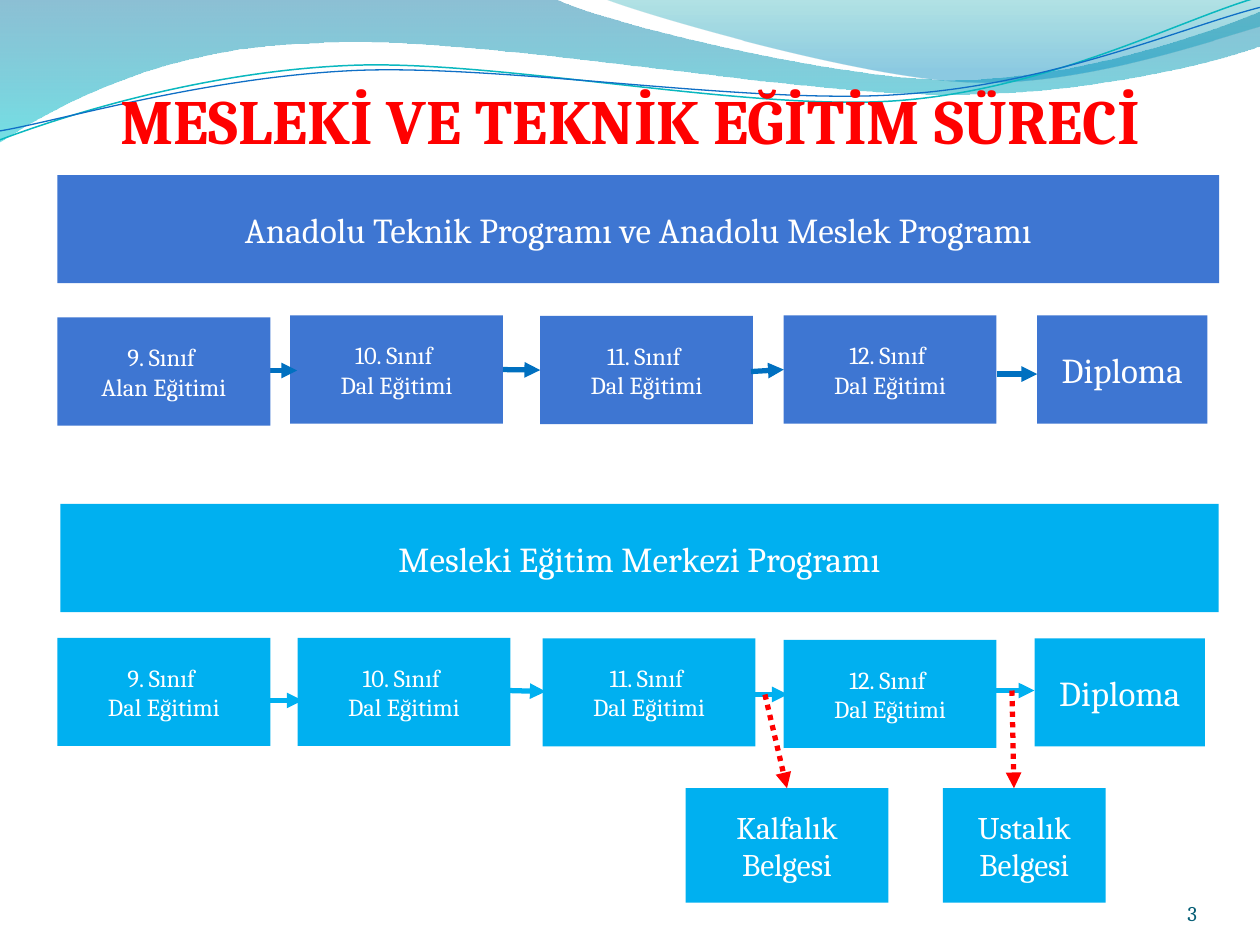
from lxml.etree import SubElement
from pptx import Presentation
from pptx.dml.color import RGBColor
from pptx.enum.dml import MSO_LINE
from pptx.enum.shapes import MSO_CONNECTOR, MSO_SHAPE
from pptx.enum.text import MSO_ANCHOR, PP_ALIGN
from pptx.oxml.ns import qn
from pptx.util import Cm, Pt

FONT = "Cambria"
WHITE = RGBColor(0xFF, 0xFF, 0xFF)
RED = RGBColor(0xFF, 0x00, 0x00)
ROYAL = RGBColor(0x3E, 0x76, 0xD2)
BLUE = RGBColor(0x00, 0x70, 0xC0)
SKY = RGBColor(0x00, 0xB0, 0xF0)
NAVY = RGBColor(0x04, 0x5D, 0x75)
WAVE_BLUE = RGBColor(0x00, 0x74, 0xA1)
WAVE_CYAN = RGBColor(0x00, 0xC6, 0xCF)
WAVE_TEAL = RGBColor(0x00, 0xA1, 0xA9)
WAVE_AZURE = RGBColor(0x00, 0x8B, 0xBF)
LINE_TEAL = RGBColor(0x0A, 0xB8, 0xBF)
LINE_BLUE = RGBColor(0x0F, 0x6F, 0xC6)

BOX_W, BOX_H, DIPLOMA_W = 4.29, 2.18, 3.43
WAVES = [
    ([(0, 0), (11.18, -0.03), (12.09, 0.43, 16.87, 1.6, 19.25, 1.6),
      (21.67, 1.6, 24.33, 0.66, 25.4, 0.23), (25.43, 0.91),
      (24.97, 1.12, 22.1, 1.93, 18.95, 1.9), (15.8, 1.9, 9.7, 0.71, 6.53, 0.86),
      (3.28, 0.91, 1.17, 2.11, -0.03, 2.87)],
     [(0, WAVE_BLUE, 45), (1, WAVE_CYAN, 55)]),
    ([(12.17, -0.03), (12.93, 0.28, 17.32, 1.57, 19.53, 1.65),
      (21.74, 1.75, 24.41, 0.81, 25.4, 0.53), (25.4, 0)],
     [(0, WAVE_TEAL, 30), (0.8, WAVE_AZURE, 45)]),
]
CURVES = [
    ([(0, 2.82), (1.22, 2.36, 4.01, 1.45, 7.04, 1.32),
      (10.03, 1.19, 15.06, 2.26, 18.11, 2.03),
      (21.16, 1.8, 23.83, 0.38, 25.35, -0.05)], LINE_TEAL, 0.85),
    ([(0, 2.64), (1.19, 2.44, 4.17, 1.55, 7.19, 1.42),
      (10.24, 1.3, 15.21, 2.13, 18.21, 1.9),
      (21.23, 1.7, 23.9, 0.53, 25.4, 0.15)], LINE_BLUE, 0.75),
]


def add_outline(s, path, close):
    """Add a freeform of corners (x, y) and cubic curves (six numbers)."""
    pts = [(Cm(seg[i]), Cm(seg[i + 1])) for seg in path for i in range(0, len(seg), 2)]
    builder = s.shapes.build_freeform(*pts[0])
    builder.add_line_segments(pts[1:], close=close)
    sp = builder.convert_to_shape()
    sp.shadow.inherit = False
    lines = iter(list(sp._element.spPr.iter(qn("a:lnTo"))))
    for seg in path[1:]:
        step = next(lines)
        if len(seg) == 6:
            step.tag = qn("a:cubicBezTo")
            for _ in range(2):
                extra = next(lines)
                step.append(extra[0])
                extra.getparent().remove(extra)
    return sp


def add_wave(s, path, stops):
    """Add a translucent wave with a top-down gradient."""
    sp = add_outline(s, path, True)
    sp.line.fill.background()
    sp.fill.gradient()
    sp.fill.gradient_angle = 270
    for stop, (position, color, _) in zip(sp.fill.gradient_stops, stops):
        stop.position = position
        stop.color.rgb = color
    for clr, (_, _, opacity) in zip(sp._element.spPr.iter(qn("a:srgbClr")), stops):
        SubElement(clr, qn("a:alpha"), val=str(opacity * 1000))


def add_curve(s, path, color, width):
    """Add a thin curved line."""
    sp = add_outline(s, path, False)
    sp.fill.background()
    sp.line.color.rgb = color
    sp.line.width = Pt(width)


def write(tf, text, size, color, align=PP_ALIGN.CENTER, bold=False):
    """Fill a text frame, one paragraph per line."""
    tf.word_wrap = True
    tf.text = text
    for p in tf.paragraphs:
        p.alignment = align
        p.font.name = FONT
        p.font.size = Pt(size)
        p.font.bold = bold
        p.font.color.rgb = color


def add_label(s, x, y, w, h, text, size, color, **style):
    """Add a bottom-anchored text box without side margins."""
    tf = s.shapes.add_textbox(Cm(x), Cm(y), Cm(w), Cm(h)).text_frame
    tf.margin_left = tf.margin_right = tf.margin_bottom = 0
    tf.vertical_anchor = MSO_ANCHOR.BOTTOM
    write(tf, text, size, color, **style)


def add_box(s, x, y, w, h, text, size, color):
    """Add a filled rectangle with white centred text."""
    sp = s.shapes.add_shape(MSO_SHAPE.RECTANGLE, Cm(x), Cm(y), Cm(w), Cm(h))
    sp.shadow.inherit = False
    sp.fill.solid()
    sp.fill.fore_color.rgb = color
    sp.line.fill.background()
    sp.text_frame.vertical_anchor = MSO_ANCHOR.MIDDLE
    write(sp.text_frame, text, size, WHITE)
    return sp


def add_grade(s, x, y, grade, color, field="Dal"):
    """Add the box of one school year."""
    return add_box(s, x, y, BOX_W, BOX_H, f"{grade}. Sınıf \n{field} Eğitimi", 14, color)


def add_arrow(s, x1, y1, x2, y2, color, kind=MSO_CONNECTOR.STRAIGHT, dash=None):
    """Add a thick connector with a triangle at its end."""
    c = s.shapes.add_connector(kind, Cm(x1), Cm(y1), Cm(x2), Cm(y2))
    c.line.color.rgb = color
    c.line.width = Pt(3)
    if dash:
        c.line.dash_style = dash
    SubElement(c.line._get_or_add_ln(), qn("a:tailEnd"), type="triangle")
    SubElement(c._element.spPr, qn("a:effectLst"))
    return c


def add_anatolian_program(s):
    """Add the upper banner and its chain of grades."""
    add_box(s, 1.16, 3.53, 23.42, BOX_H,
            "Anadolu Teknik Programı ve Anadolu Meslek Programı", 20, ROYAL)
    grade10 = add_grade(s, 5.85, 6.36, 10, ROYAL)
    grade11 = add_grade(s, 10.89, 6.37, 11, ROYAL)
    grade12 = add_grade(s, 15.8, 6.36, 12, ROYAL)
    add_box(s, 20.91, 6.36, DIPLOMA_W, BOX_H, "Diploma", 20, ROYAL)
    add_arrow(s, 4.93, 7.47, 5.99, 7.47, BLUE, MSO_CONNECTOR.ELBOW)
    c = add_arrow(s, 10.13, 7.44, 10.89, 7.47, BLUE)
    c.begin_connect(grade10, 3)
    c.end_connect(grade11, 1)
    add_arrow(s, 15.14, 7.49, 15.8, 7.44, BLUE).end_connect(grade12, 1)
    add_arrow(s, 20.09, 7.54, 20.91, 7.54, BLUE)
    add_grade(s, 1.16, 6.4, 9, ROYAL, "Alan")


def add_center_program(s):
    """Add the lower banner, its chain of grades and the certificates."""
    add_box(s, 1.22, 10.16, 23.35, BOX_H, "Mesleki Eğitim Merkezi Programı", 20, SKY)
    for x1, y1, x2, y2 in [(5.44, 14.12, 6.1, 14.12), (10.24, 13.92, 11, 13.94),
                           (15.04, 14, 15.88, 14), (20.02, 13.92, 20.85, 13.92)]:
        add_arrow(s, x1, y1, x2, y2, SKY)
    for grade, x, y in [(9, 1.16, 12.86), (10, 6, 12.86),
                        (11, 10.94, 12.87), (12, 15.8, 12.9)]:
        add_grade(s, x, y, grade, SKY)
    add_box(s, 20.86, 12.87, DIPLOMA_W, BOX_H, "Diploma", 20, SKY)
    kalfalik = add_box(s, 13.82, 15.89, 4.09, 2.31, "Kalfalık Belgesi", 18, SKY)
    add_box(s, 19.01, 15.89, 3.28, 2.31, "Ustalık Belgesi", 18, SKY)
    c = add_arrow(s, 15.42, 14, 15.88, 15.89, RED, dash=MSO_LINE.ROUND_DOT)
    c.end_connect(kalfalik, 0)
    add_arrow(s, 20.4, 13.92, 20.44, 15.89, RED, dash=MSO_LINE.ROUND_DOT)


def main():
    """Build the slide and save it."""
    prs = Presentation()
    prs.slide_width, prs.slide_height = Cm(25.4), Cm(19.05)
    s = prs.slides.add_slide(prs.slide_layouts[6])
    for wave in WAVES:
        add_wave(s, *wave)
    for curve in CURVES:
        add_curve(s, *curve)
    add_label(s, 1.27, 1.32, 22.86, 1.85, "MESLEKİ VE TEKNİK EĞİTİM SÜRECİ", 36, RED, bold=True)
    add_label(s, 22.02, 17.65, 2.11, 1.02, "3", 12, NAVY, align=PP_ALIGN.RIGHT)
    add_anatolian_program(s)
    add_center_program(s)
    prs.save("out.pptx")


if __name__ == "__main__":
    main()
